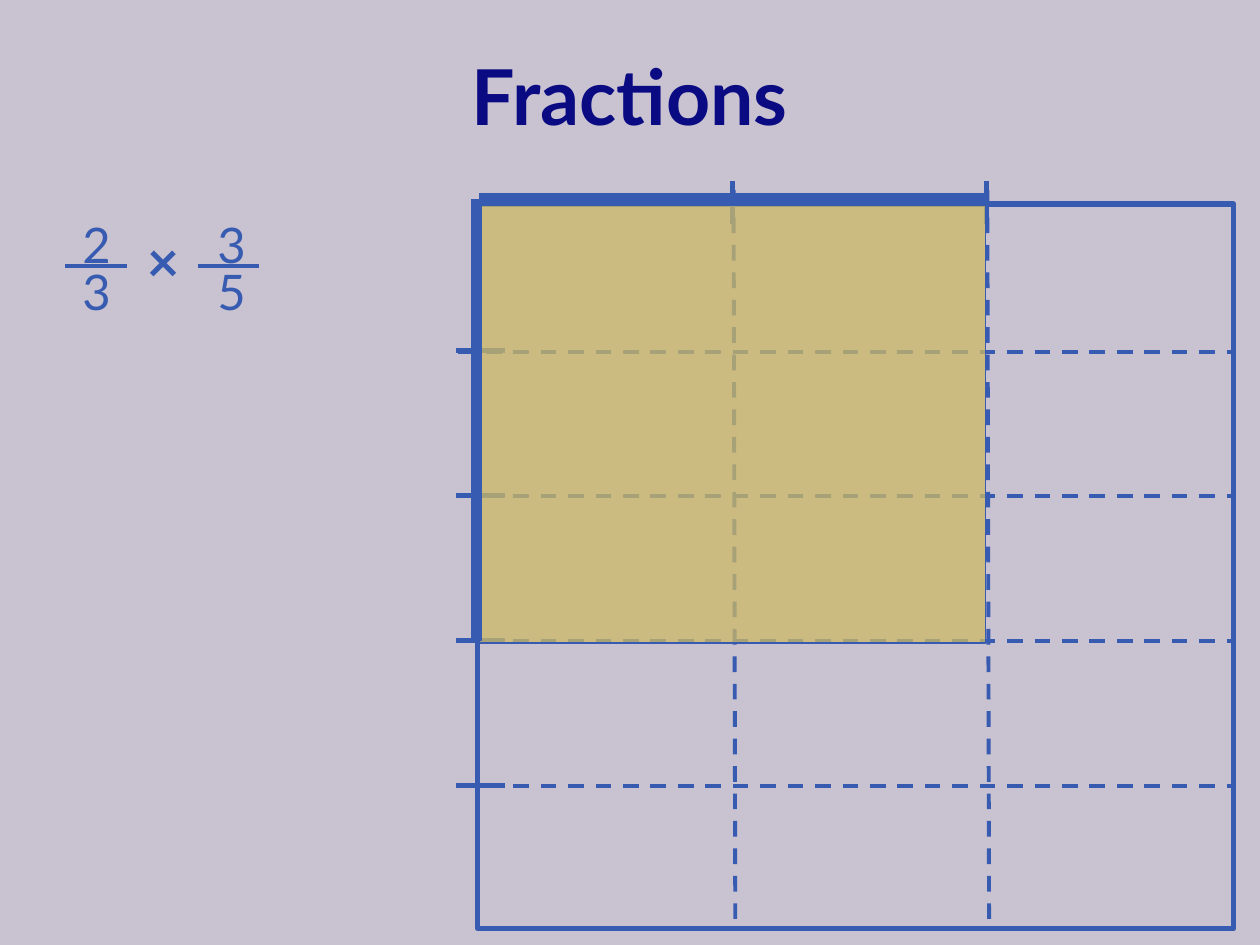
from lxml.etree import SubElement
from pptx import Presentation
from pptx.dml.color import RGBColor
from pptx.enum.dml import MSO_LINE
from pptx.enum.shapes import MSO_CONNECTOR, MSO_SHAPE
from pptx.enum.text import MSO_ANCHOR, PP_ALIGN
from pptx.oxml.ns import qn
from pptx.util import Pt

BACKGROUND, NAVY, BLUE, SAND = "C9C2D1", "0A0A82", "365BB0", "CEB966"


def color(hex_string):
    return RGBColor.from_string(hex_string)


def add_text(slide, text, box, size, hex_color=BLUE, bold=False, anchor=MSO_ANCHOR.TOP):
    frame = slide.shapes.add_textbox(*map(Pt, box)).text_frame
    frame.word_wrap = True
    frame.vertical_anchor = anchor
    paragraph = frame.paragraphs[0]
    paragraph.alignment = PP_ALIGN.CENTER
    run = paragraph.add_run()
    run.text = text
    run.font.name = "Lato"
    run.font.size = Pt(size)
    run.font.bold = bold
    run.font.color.rgb = color(hex_color)


def add_line(slide, start, end, width, dashed=False):
    connector = slide.shapes.add_connector(
        MSO_CONNECTOR.STRAIGHT, *map(Pt, (*start, *end)))
    connector.line.color.rgb = color(BLUE)
    connector.line.width = Pt(width)
    if dashed:
        connector.line.dash_style = MSO_LINE.DASH
    SubElement(connector._element.spPr, qn("a:effectLst"))


def add_rectangle(slide, box, line_width, fill=None, opacity=100):
    shape = slide.shapes.add_shape(MSO_SHAPE.RECTANGLE, *map(Pt, box))
    shape.shadow.inherit = False
    shape.line.color.rgb = color(BLUE)
    shape.line.width = Pt(line_width)
    if fill is None:
        shape.fill.background()
        return
    shape.fill.solid()
    shape.fill.fore_color.rgb = color(fill)
    fill_color = shape._element.spPr.find(qn("a:solidFill"))[0]
    SubElement(fill_color, qn("a:alpha"), val=str(opacity * 1000))


def add_fraction(slide, numerator, denominator, left, top, bar_left):
    for row, number in enumerate((numerator, denominator)):
        add_text(slide, number, (left, top + 27 * row, 42.5, 41), 28)
    add_line(slide, (bar_left, top + 33.3), (bar_left + 35.3, top + 33.3), 2)


def add_product(slide, left, top):
    add_fraction(slide, "2", "3", left, top, left + 3.4)
    add_text(slide, "×", (left + 38, top + 7.2, 42.5, 45), 32, bold=True)
    add_fraction(slide, "3", "5", left + 77, top, left + 79)


def add_area_model(slide, box, columns, rows, shaded_columns, shaded_rows):
    """Grid with its first columns and rows shaded and marked by thick bars."""
    left, top, width, height = box
    right, bottom = left + width, top + height
    column_lines = [left + 1.2 + 145 * i for i in range(1, columns)]
    row_lines = [top + 1.5 + height / rows * i for i in range(1, rows)]

    add_rectangle(slide, box, 3)
    for x in column_lines:
        add_line(slide, (x - 0.5, top - 13), (x - 0.5, top + 11.5), 3)
        add_line(slide, (x, top - 8), (x + 1, bottom + 1), 2.25, dashed=True)
    for y in row_lines:
        add_line(slide, (left - 12.5, y - 0.5), (left + 15.5, y - 0.5), 3)
        add_line(slide, (left - 11, y), (right + 1.5, y), 2.25, dashed=True)

    shaded_right = column_lines[shaded_columns - 1] - 1
    shaded_bottom = row_lines[shaded_rows - 1] + 1
    add_rectangle(slide, (left + 1, top + 1, shaded_right - left - 1,
                          shaded_bottom - top - 1), 0.75, SAND, 75)
    add_line(slide, (left + 1, top - 3.5), (shaded_right + 1, top - 3.5), 6)
    add_line(slide, (left - 0.7, top - 3), (left - 0.7, shaded_bottom - 1), 6)


def main():
    presentation = Presentation()
    presentation.slide_width, presentation.slide_height = Pt(720), Pt(540)
    slide = presentation.slides.add_slide(presentation.slide_layouts[6])
    slide.background.fill.solid()
    slide.background.fill.fore_color.rgb = color(BACKGROUND)

    add_text(slide, "Fractions", (12, 12, 696, 84), 44, NAVY, bold=True,
             anchor=MSO_ANCHOR.MIDDLE)
    add_product(slide, 34, 118.8)
    add_area_model(slide, (273, 116.6, 432, 414), columns=3, rows=5,
                   shaded_columns=2, shaded_rows=3)
    presentation.save("out.pptx")


if __name__ == "__main__":
    main()
